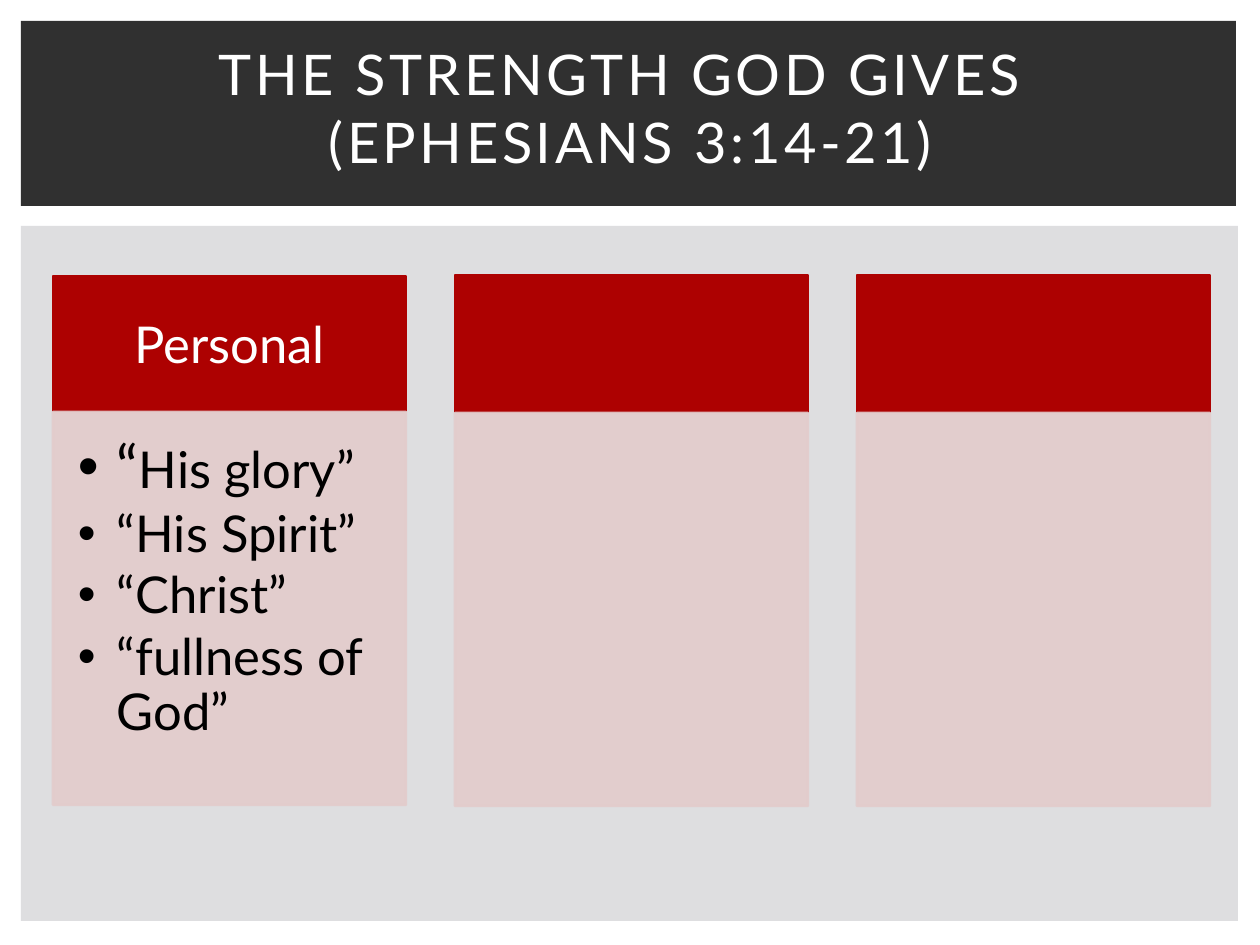
import pptx
import pptx.util
import pptx.dml.color
import pptx.enum.shapes
import pptx.enum.text
import pptx.oxml.ns
import lxml.etree

SCALE = 914400 / 126
THEME = {
    "font": "Lato", "back": "DEDEE0", "band": "303030", "head": "AD0101",
    "panel": "E3CCCC", "light": "FFFFFF", "dark": "000000",
    "title": 32, "text": 29, "quote": 34, "line": 1.5,
}
qn = pptx.oxml.ns.qn
rgb = pptx.dml.color.RGBColor.from_string
middle = pptx.enum.text.MSO_ANCHOR.MIDDLE
center = pptx.enum.text.PP_ALIGN.CENTER


def px(count):
    return round(count * SCALE)


def add_box(place, color, edge=False, alpha=None):
    """Add a filled rectangle; alpha is its opacity in percent."""
    box = slide.shapes.add_shape(
        pptx.enum.shapes.MSO_SHAPE.RECTANGLE, *map(px, place))
    box.shadow.inherit = False
    box.fill.solid()
    box.fill.fore_color.rgb = rgb(color)
    if edge:
        box.line.color.rgb = rgb(color)
        box.line.width = pptx.util.Pt(THEME["line"])
    else:
        box.line.fill.background()
    if alpha:
        for tint in box.element.spPr.iter(qn("a:srgbClr")):
            lxml.etree.SubElement(tint, qn("a:alpha"), val=str(alpha * 1000))
    return box


deck = pptx.Presentation()
deck.slide_width, deck.slide_height = px(1260), px(945)
slide = deck.slides.add_slide(deck.slide_layouts[1])

# Backdrop and cards
add_box((21, 226, 1217, 695), THEME["back"])
add_box((21, 21, 1215, 185), THEME["band"])
heads = []
for col in range(3):
    left = 53 + 402 * col
    top, tall, base = (276, 135, 412) if col == 0 else (275, 137, 413)
    heads.append(add_box((left, top, 353, tall), THEME["head"], True))
    add_box((left, base, 353, 393), THEME["panel"], True, 90)

# Text frames: place, insets (left, top, right, bottom), anchor
title, body = slide.shapes.title, slide.placeholders[1]
for shape, place, inset, anchor in (
    (title, (53, 64, 1155, 145), (13, 6, 13, 65), middle),
    (heads[0], (53, 276, 353, 135), (29, 16, 29, 16), middle),
    (body, (53, 412, 353, 393), (25, 25, 33, 38),
     pptx.enum.text.MSO_ANCHOR.TOP),
):
    for name, value in zip(("left", "top", "width", "height"), place):
        setattr(shape, name, px(value))
    frame = shape.text_frame
    for side, value in zip(("left", "top", "right", "bottom"), inset):
        setattr(frame, "margin_" + side, px(value))
    form = {"word_wrap": True, "vertical_anchor": anchor,
            "auto_size": pptx.enum.text.MSO_AUTO_SIZE.NONE}
    for name, value in form.items():
        setattr(frame, name, value)
for shape in (title, body):
    slide.shapes.element.append(shape.element)

# Wording
title.text_frame.text = "THE STRENGTH GOD GIVES \v(EPHESIANS 3:14-21)"
heads[0].text_frame.text = "Personal"
items = ("His glory”", "“His Spirit”", "“Christ”", "“fullness of God”")
for index, item in enumerate(items):
    frame = body.text_frame
    para = frame.add_paragraph() if index else frame.paragraphs[0]
    para.level = 1
    props = para._p.get_or_add_pPr()
    props.set("marL", str(px(39)))
    props.set("indent", str(px(-39)))
    lxml.etree.SubElement(props, qn("a:buChar"), char="•")
    form = {"line_spacing": 0.9, "space_before": pptx.util.Pt(0),
            "space_after": pptx.util.Pt(4)}
    for name, value in form.items():
        setattr(para, name, value)
    if index == 0:
        para.add_run().text = "“"
    para.add_run().text = item

# Type
for shape, size, color in (
    (title, THEME["title"], THEME["light"]),
    (heads[0], THEME["text"], THEME["light"]),
    (body, THEME["text"], THEME["dark"]),
):
    for para in shape.text_frame.paragraphs:
        if shape is not body:
            para.alignment = center
        for run in para.runs:
            run.font.name = THEME["font"]
            run.font.size = pptx.util.Pt(size)
            run.font.color.rgb = rgb(color)
            if shape is title:
                run.font._element.set("spc", "200")
quote = body.text_frame.paragraphs[0].runs[0]
quote.font.size = pptx.util.Pt(THEME["quote"])

deck.save("out.pptx")
